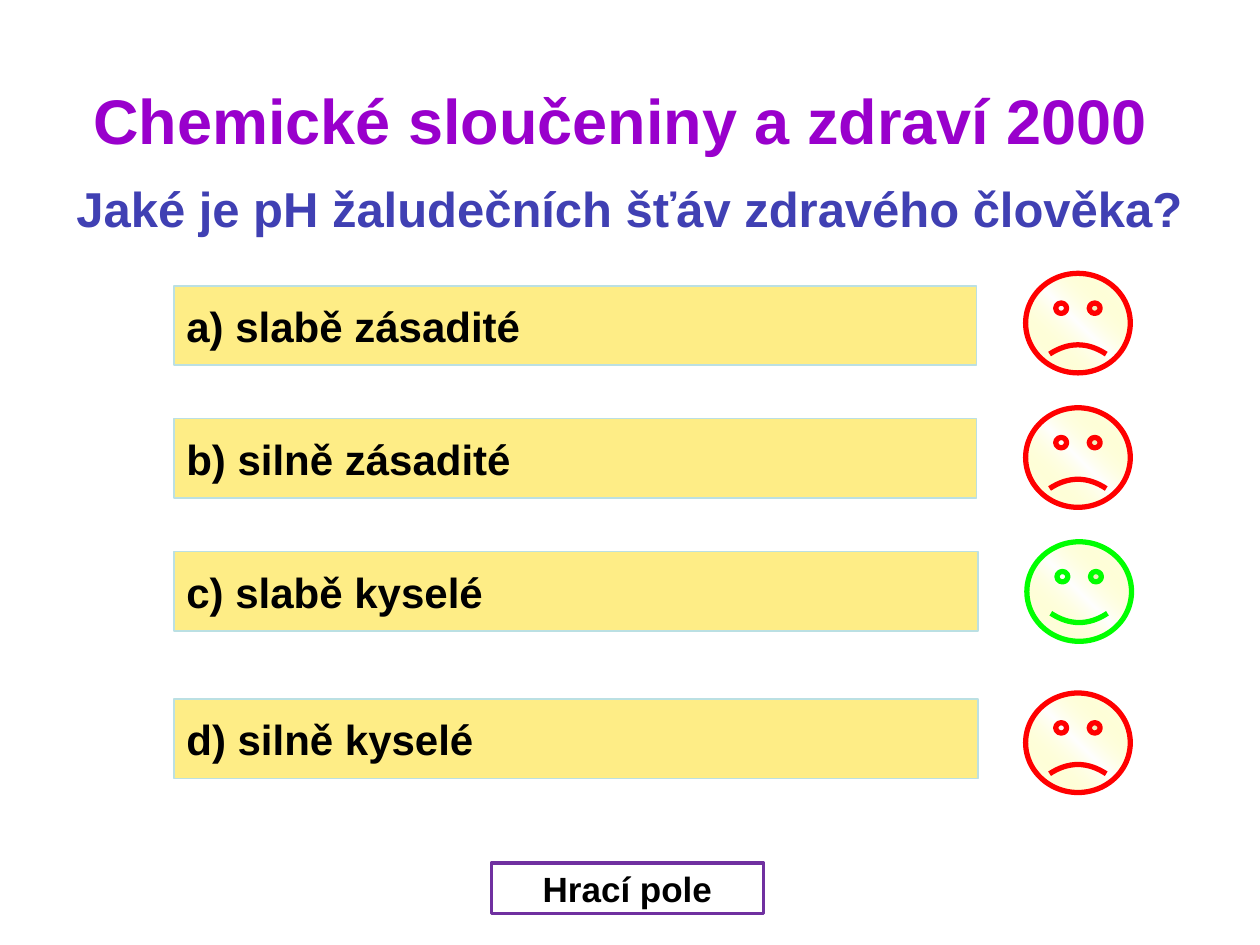
import pptx
import pptx.dml.color
import pptx.enum.shapes
import pptx.enum.text
import pptx.oxml
import pptx.util

Pt = pptx.util.Pt
SHAPES = pptx.enum.shapes.MSO_SHAPE
ALIGN = pptx.enum.text.PP_ALIGN
ANCHOR = pptx.enum.text.MSO_ANCHOR
NAMESPACE = "http://schemas.openxmlformats.org/drawingml/2006/main"
COLORS = {
    "title": "9900CC", "question": "4040B3", "text": "000000",
    "answer": "FEED86", "answer_line": "BBE0E3",
    "button": "FFFFFF", "button_line": "7030A0",
    "wrong": "FF0000", "right": "00FF00", "glow": "FFFF66", "white": "FFFFFF",
}
ANSWERS = [
    ("a) slabě zásadité", 163.4, 458.6, 156.2, False),
    ("b) silně zásadité", 239.2, 458.6, 233, False),
    ("c) slabě kyselé", 315.2, 459.4, 309.6, True),
    ("d) silně kyselé", 399.4, 459.4, 396, False),
]


def rgb(name):
    """Return the named colour."""
    return pptx.dml.color.RGBColor.from_string(COLORS[name])


def set_attributes(target, values):
    """Set each named value on the target."""
    for name, value in values.items():
        setattr(target, name, value)


def write_paragraph(paragraph, text, size, color, alignment):
    """Write one bold Arial run into a paragraph."""
    paragraph.alignment = alignment
    run = paragraph.add_run()
    run.text = text
    set_attributes(run.font, {"name": "Arial", "size": Pt(size), "bold": True})
    run.font.color.rgb = rgb(color)


def add_heading(slide):
    """Add the title with the question below it."""
    box = slide.shapes.add_textbox(Pt(19.4), Pt(43.2), Pt(680.4), Pt(56.9))
    frame = box.text_frame
    frame.word_wrap = True
    lines = [("Chemické sloučeniny a zdraví 2000 ", 36, "title", 0),
             ("Jaké je pH žaludečních šťáv zdravého člověka?", 28, "question", 12)]
    for index, (text, size, color, space) in enumerate(lines):
        paragraph = frame.add_paragraph() if index else frame.paragraphs[0]
        properties = paragraph._p.get_or_add_pPr()
        properties.set("marL", str(Pt(27)))
        properties.set("indent", str(-Pt(27)))
        if space:
            paragraph.space_before = Pt(space)
        write_paragraph(paragraph, text, size, color, ALIGN.CENTER)


def add_button(slide, bounds, text, size, style, line_width, alignment):
    """Add a blank action button with its label."""
    shape = slide.shapes.add_shape(SHAPES.ACTION_BUTTON_CUSTOM, *map(Pt, bounds))
    shape.shadow.inherit = False
    shape.fill.solid()
    shape.fill.fore_color.rgb = rgb(style)
    shape.line.color.rgb = rgb(style + "_line")
    shape.line.width = Pt(line_width)
    frame = shape.text_frame
    set_attributes(frame, {"word_wrap": False, "vertical_anchor": ANCHOR.MIDDLE})
    write_paragraph(frame.paragraphs[0], text, size, "text", alignment)


def add_face(slide, left, top, correct):
    """Add a smiling or frowning face with a see-through middle."""
    shape = slide.shapes.add_shape(
        SHAPES.SMILEY_FACE, Pt(left), Pt(top), Pt(59.8), Pt(56.9))
    shape.shadow.inherit = False
    shape.adjustments[0] = 0.0465 if correct else -0.0465
    shape.line.color.rgb = rgb("right" if correct else "wrong")
    shape.line.width = Pt(3)
    gradient = pptx.oxml.parse_xml(
        f'<a:gradFill xmlns:a="{NAMESPACE}" rotWithShape="1"><a:gsLst>'
        f'<a:gs pos="0"><a:srgbClr val="{COLORS["white"]}"/></a:gs>'
        f'<a:gs pos="50000"><a:srgbClr val="{COLORS["glow"]}">'
        '<a:alpha val="0"/></a:srgbClr></a:gs>'
        f'<a:gs pos="100000"><a:srgbClr val="{COLORS["white"]}"/></a:gs>'
        '</a:gsLst><a:lin ang="18900000" scaled="1"/></a:gradFill>')
    shape._element.spPr.find(f"{{{NAMESPACE}}}prstGeom").addnext(gradient)


def main():
    """Build the quiz slide and save it."""
    presentation = pptx.Presentation()
    set_attributes(presentation, {"slide_width": Pt(720), "slide_height": Pt(540)})
    slide = presentation.slides.add_slide(presentation.slide_layouts[6])
    add_button(slide, (280.8, 493.2, 155.5, 28.8), "Hrací pole", 20,
               "button", 2, ALIGN.CENTER)
    add_heading(slide)
    for text, top, width, face_top, correct in ANSWERS:
        add_button(slide, (99.4, top, width, 45.4), text, 24,
                   "answer", 1, ALIGN.LEFT)
        add_face(slide, 586.8 if correct else 586.1, face_top, correct)
    presentation.save("out.pptx")


if __name__ == "__main__":
    main()
